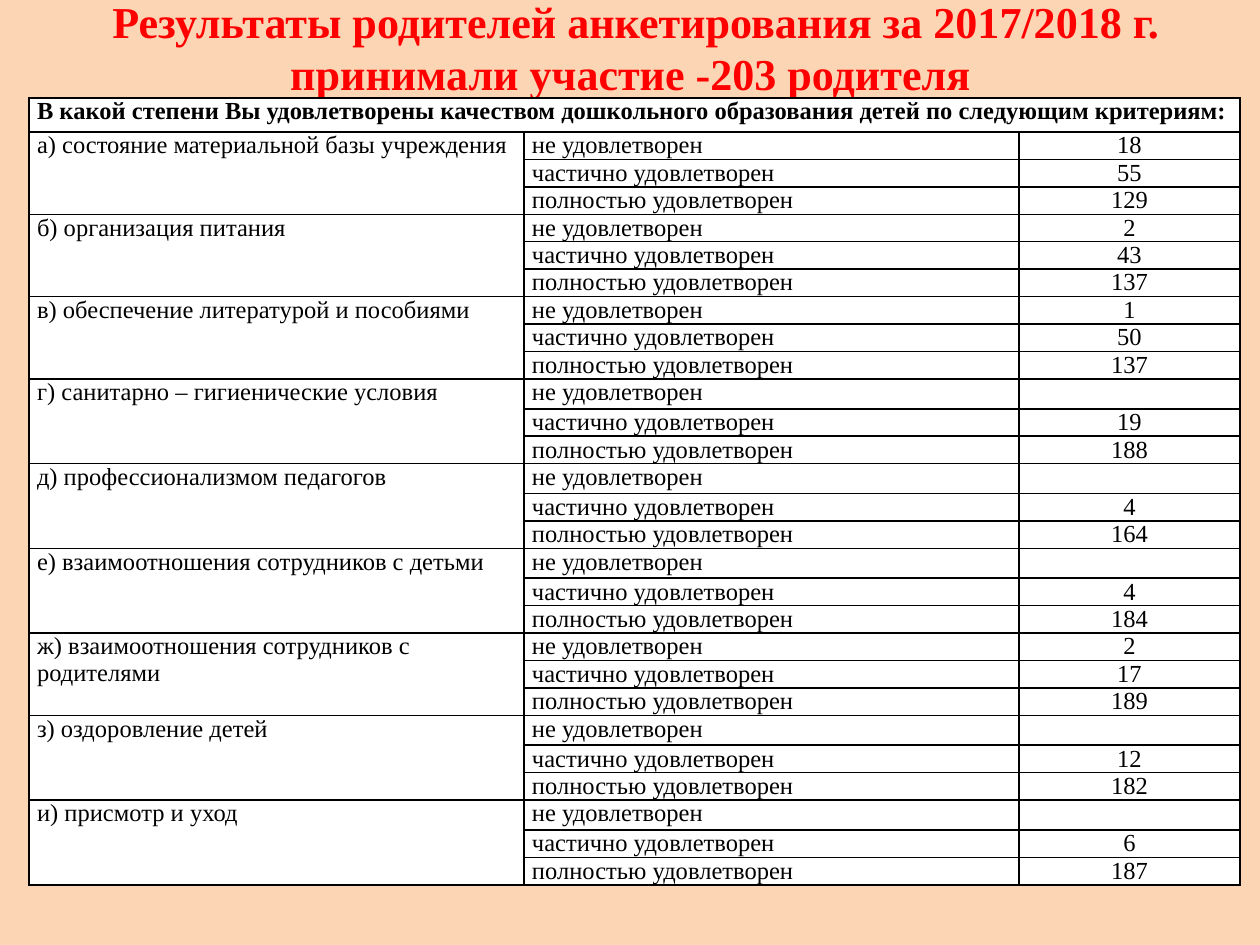
from lxml.etree import SubElement
from pptx import Presentation
from pptx.dml.color import RGBColor as Color
from pptx.enum.text import MSO_ANCHOR as Anchor, MSO_AUTO_SIZE as AutoSize, PP_ALIGN as Align
from pptx.oxml.ns import qn
from pptx.util import Emu, Pt

THEME = {
    "font": "Times New Roman",
    "page": Color.from_string("FCD5B5"),
    "title": Color.from_string("FF0000"),
    "text": Color.from_string("000000"),
    "cell": Color.from_string("FFFFFF"),
    "title_size": Pt(25.2),
    "title_line": Pt(30),
    "text_size": Pt(14),
    "border": Pt(1),
}
PX_PER_INCH = 126

HEADING = "В какой степени Вы удовлетворены качеством дошкольного образования детей по следующим критериям:"
LEVELS = ["не удовлетворен", "частично удовлетворен", "полностью удовлетворен"]
CRITERIA = [
    ("а) состояние материальной базы учреждения", ["18", "55", "129"]),
    ("б) организация питания", ["2", "43", "137"]),
    ("в) обеспечение литературой и пособиями", ["1", "50", "137"]),
    ("г) санитарно – гигиенические условия", ["", "19", "188"]),
    ("д) профессионализмом педагогов", ["", "4", "164"]),
    ("е) взаимоотношения сотрудников с детьми", ["", "4", "184"]),
    ("ж) взаимоотношения сотрудников с родителями", ["2", "17", "189"]),
    ("з) оздоровление детей", ["", "12", "182"]),
    ("и) присмотр и уход", ["", "6", "187"]),
]


def px(length):
    return Emu(round(length * 914400 / PX_PER_INCH))


def write_cell(cell, text, bold=False, align=Align.LEFT):
    margins = {"margin_left": px(8), "margin_right": px(8), "margin_top": 0, "margin_bottom": 0}
    for name, value in margins.items():
        setattr(cell, name, value)
    para = cell.text_frame.paragraphs[0]
    para.alignment = align
    if text:
        span = para.add_run()
        span.text = text
        formats = {"name": THEME["font"], "size": THEME["text_size"], "bold": bold}
        for name, value in formats.items():
            setattr(span.font, name, value)
        span.font.color.rgb = THEME["text"]
    else:
        # An empty cell would otherwise take the default size and stretch its row.
        SubElement(para._p, qn("a:endParaRPr"), sz=str(THEME["text_size"] // 127))


deck = Presentation()
deck.slide_width, deck.slide_height = px(1260), px(945)
page = deck.slides.add_slide(deck.slide_layouts[5])
page.background.fill.solid()
page.background.fill.fore_color.rgb = THEME["page"]

title = page.shapes.title
title.left, title.top, title.width, title.height = px(69), px(0), px(1134), px(88)
title_formats = {
    "word_wrap": True,
    "auto_size": AutoSize.NONE,
    "vertical_anchor": Anchor.MIDDLE,
    "margin_top": px(12),
    "margin_bottom": px(6),
}
for name, value in title_formats.items():
    setattr(title.text_frame, name, value)
para = title.text_frame.paragraphs[0]
para.text = "Результаты родителей анкетирования за 2017/2018 г.\vпринимали участие -203 родителя "
para.alignment = Align.CENTER
para.line_spacing = THEME["title_line"]
for span in para.runs:
    formats = {"name": THEME["font"], "size": THEME["title_size"], "bold": True}
    for name, value in formats.items():
        setattr(span.font, name, value)
    span.font.color.rgb = THEME["title"]

answer_rows = len(CRITERIA) * len(LEVELS)
frame = page.shapes.add_table(1 + answer_rows, 3, px(29), px(98), px(1211), px(775))
table = frame.table
table.first_row = table.horz_banding = False
for column, width in zip(table.columns, [495, 495, 221]):
    column.width = px(width)
for index, row in enumerate(table.rows):
    row.height = px(741 / answer_rows) if index else px(34)

for cell in table.iter_cells():
    properties = cell._tc.get_or_add_tcPr()
    for side in ("lnL", "lnR", "lnT", "lnB"):
        line = SubElement(properties, qn(f"a:{side}"), w=str(THEME["border"]))
        fill = SubElement(line, qn("a:solidFill"))
        SubElement(fill, qn("a:srgbClr"), val=str(THEME["text"]))
    cell.fill.solid()
    cell.fill.fore_color.rgb = THEME["cell"]

table.cell(0, 0).merge(table.cell(0, 2))
write_cell(table.cell(0, 0), HEADING, bold=True)
for group, (criterion, counts) in enumerate(CRITERIA):
    first = 1 + group * len(LEVELS)
    table.cell(first, 0).merge(table.cell(first + len(LEVELS) - 1, 0))
    write_cell(table.cell(first, 0), criterion)
    for row, (level, count) in enumerate(zip(LEVELS, counts), first):
        write_cell(table.cell(row, 1), level)
        write_cell(table.cell(row, 2), count, align=Align.CENTER)

deck.save("out.pptx")
